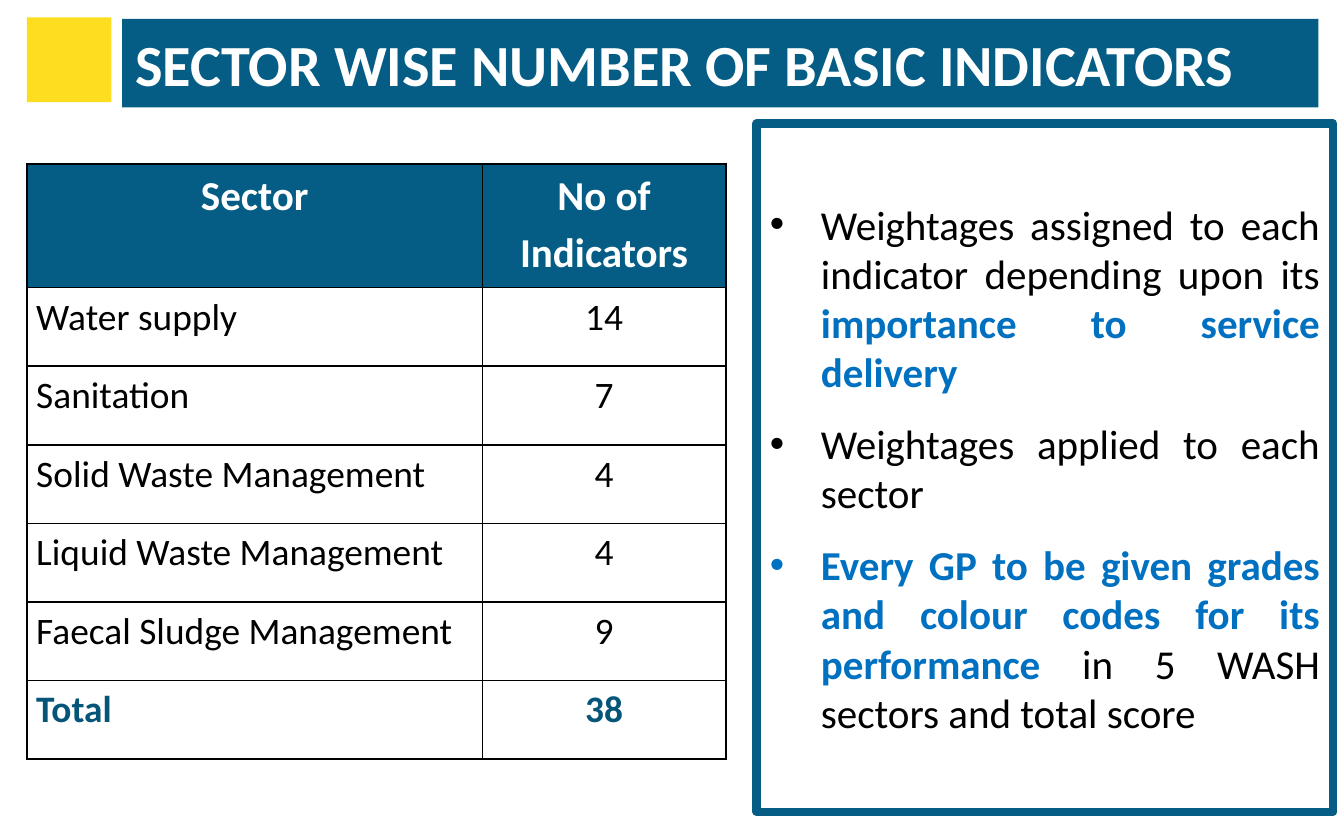
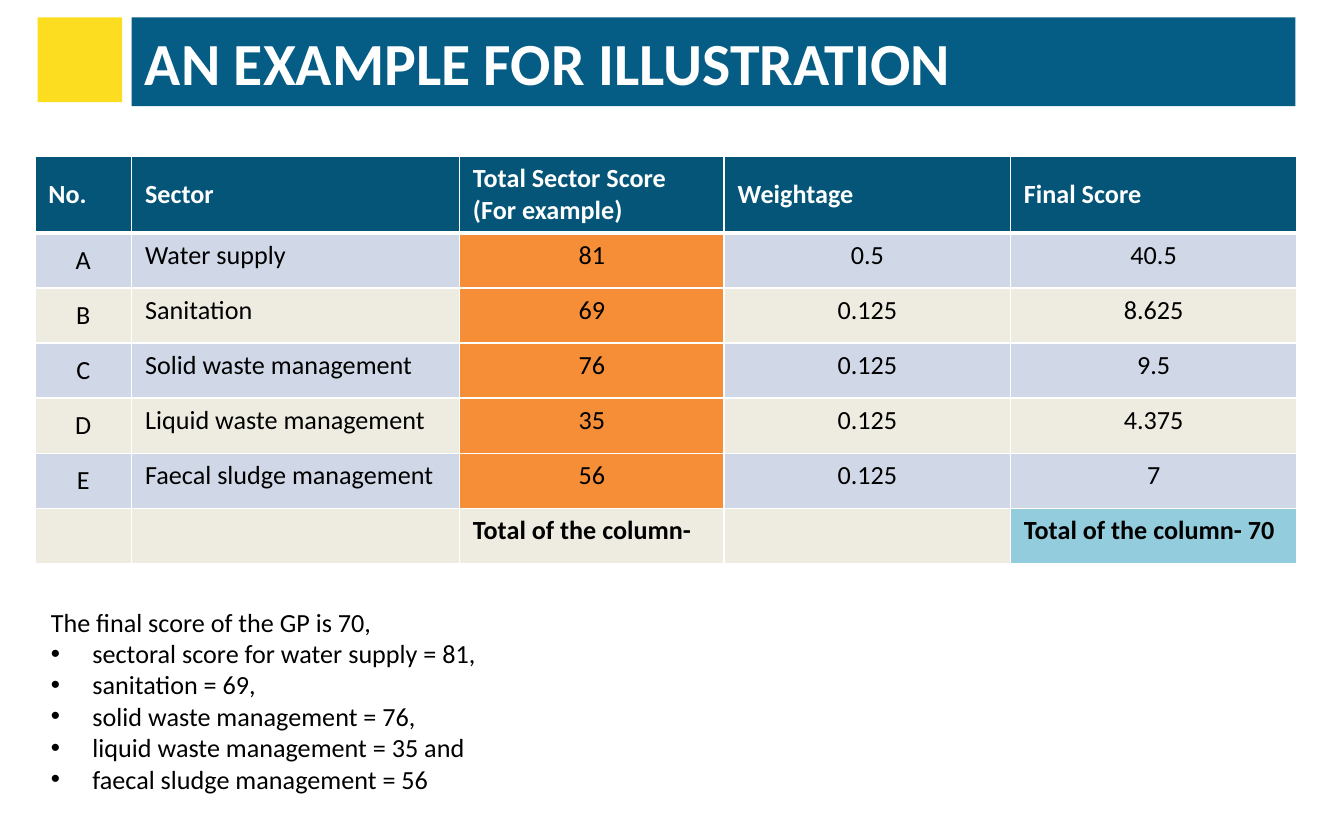
"""Build two slides on sector indicators and weighted scores."""
from dataclasses import dataclass, replace
from typing import Optional

from lxml import etree
from pptx import Presentation
from pptx.dml.color import RGBColor
from pptx.enum.shapes import MSO_SHAPE
from pptx.enum.text import MSO_ANCHOR, PP_ALIGN
from pptx.oxml.ns import qn
from pptx.util import Inches, Pt

RECTANGLE = MSO_SHAPE.RECTANGLE
TOP, MIDDLE = MSO_ANCHOR.TOP, MSO_ANCHOR.MIDDLE
LEFT, CENTER, JUSTIFY = PP_ALIGN.LEFT, PP_ALIGN.CENTER, PP_ALIGN.JUSTIFY

FONT = "Calibri"
WHITE, BLACK = "FFFFFF", "000000"
BAND_BLUE, DEEP_BLUE, ACCENT_BLUE = "055D85", "055579", "0070C0"
YELLOW, ORANGE, SKY = "FCDD20", "F68E38", "93CDDD"
STRIPES = ("D0D8E8", "EEECE1")


@dataclass(frozen=True)
class Area:
    """Position and size in inches."""
    left: float
    top: float
    width: float
    height: float


@dataclass(frozen=True)
class Span:
    """Text with one look."""
    text: str
    size: float
    color: str = BLACK
    bold: bool = False


@dataclass(frozen=True)
class Block:
    """Paragraph made of spans."""
    spans: tuple[Span, ...]
    align: PP_ALIGN = LEFT
    indent: float = 0
    space: float = 0
    line_spacing: Optional[float] = None


@dataclass(frozen=True)
class CellStyle:
    """Look of a table cell."""
    size: float
    fill: Optional[str] = None
    color: str = BLACK
    bold: bool = False
    align: PP_ALIGN = LEFT
    anchor: MSO_ANCHOR = TOP
    line_spacing: Optional[float] = None
    margins: tuple[float, float] = (0.1, 0.05)


@dataclass(frozen=True)
class Entry:
    """Text and style of a table cell."""
    text: str
    style: CellStyle


@dataclass(frozen=True)
class Header:
    """Title band and the square beside it."""
    title: str
    size: float
    band: Area
    square: Area


def rgb(color: str) -> RGBColor:
    """Turn a hex string into a colour."""
    return RGBColor.from_string(color)


def place(area: Area) -> tuple[int, int, int, int]:
    """Give an area as lengths."""
    return (Inches(area.left), Inches(area.top),
            Inches(area.width), Inches(area.height))


def add_bullet(para, indent: float) -> None:
    """Give a paragraph a hanging round bullet."""
    properties = para._p.get_or_add_pPr()
    properties.set("marL", str(Inches(indent)))
    properties.set("indent", str(-Inches(indent)))
    etree.SubElement(properties, qn("a:buFont")).set("typeface", "Arial")
    etree.SubElement(properties, qn("a:buChar")).set("char", "•")


def write(text_frame, blocks: list[Block]) -> None:
    """Fill a text frame with paragraphs."""
    text_frame.word_wrap = True
    for number, block in enumerate(blocks):
        para = text_frame.add_paragraph() if number else text_frame.paragraphs[0]
        para.alignment = block.align
        if block.line_spacing:
            para.line_spacing = block.line_spacing
        if block.space:
            para.space_before = para.space_after = Pt(block.space)
        if block.indent:
            add_bullet(para, block.indent)
        for span in block.spans:
            run = para.add_run()
            run.text = span.text
            run.font.name = FONT
            run.font.size = Pt(span.size)
            run.font.bold = span.bold
            run.font.color.rgb = rgb(span.color)


def add_box(page, area: Area, fill: str, line: Optional[str] = None,
            line_width: float = 0):
    """Add a flat rectangle."""
    box = page.shapes.add_shape(RECTANGLE, *place(area))
    box.shadow.inherit = False
    box.fill.solid()
    box.fill.fore_color.rgb = rgb(fill)
    if line:
        box.line.color.rgb = rgb(line)
        box.line.width = Pt(line_width)
    else:
        box.line.fill.background()
    box.text_frame.vertical_anchor = MIDDLE
    return box


def add_header(page, header: Header) -> None:
    """Add the title band and its square."""
    band = add_box(page, header.band, BAND_BLUE)
    write(band.text_frame, [Block((Span(header.title, header.size, WHITE, True),))])
    add_box(page, header.square, YELLOW)


def set_borders(cell, color: str, bottom: float) -> None:
    """Draw the four borders of a cell."""
    properties = cell._tc.get_or_add_tcPr()
    widths = {"lnL": 1, "lnR": 1, "lnT": 1, "lnB": bottom}
    for position, (side, width) in enumerate(widths.items()):
        line = etree.Element(qn(f"a:{side}"), w=str(Pt(width)))
        fill = etree.SubElement(line, qn("a:solidFill"))
        etree.SubElement(fill, qn("a:srgbClr")).set("val", color)
        properties.insert(position, line)


def fill_cell(cell, entry: Entry) -> None:
    """Write and style one cell."""
    style = entry.style
    side, edge = style.margins
    cell.margin_left = cell.margin_right = Inches(side)
    cell.margin_top = cell.margin_bottom = Inches(edge)
    cell.vertical_anchor = style.anchor
    if style.fill:
        cell.fill.solid()
        cell.fill.fore_color.rgb = rgb(style.fill)
    else:
        cell.fill.background()
    if entry.text:
        write(cell.text_frame, [
            Block((Span(line, style.size, style.color, style.bold),),
                  style.align, line_spacing=style.line_spacing)
            for line in entry.text.split("\n")])


def add_grid(page, area: Area, columns: list[float], heights: list[float],
             rows: list[list[Entry]], border: str, header_rule: float = 1) -> None:
    """Add a table with its own fills and borders."""
    table = page.shapes.add_table(len(rows), len(columns), *place(area)).table
    table.first_row = table.horz_banding = False
    for column, width in zip(table.columns, columns):
        column.width = Inches(width)
    for row, height in zip(table.rows, heights):
        row.height = Inches(height)
    for row_number, entries in enumerate(rows):
        bottom = 1 if row_number else header_rule
        for column_number, entry in enumerate(entries):
            cell = table.cell(row_number, column_number)
            fill_cell(cell, entry)
            set_borders(cell, border, bottom)


def build_indicators(page) -> None:
    """Build the slide with indicator counts."""
    counts = [("Water supply", 14), ("Sanitation", 7),
              ("Solid Waste Management", 4), ("Liquid Waste Management", 4),
              ("Faecal Sludge Management", 9)]
    body = CellStyle(20, align=JUSTIFY, line_spacing=1.15, margins=(0.07, 0))
    heading = replace(body, size=22, fill=BAND_BLUE, color=WHITE, bold=True,
                      align=CENTER)
    total = replace(body, color=DEEP_BLUE, bold=True)
    rows = [[Entry("Sector", heading), Entry("No of Indicators", heading)]]
    lines = [(name, count, body) for name, count in counts]
    lines.append(("Total", sum(count for _, count in counts), total))
    for name, count, style in lines:
        rows.append([Entry(name, style),
                     Entry(str(count), replace(style, align=CENTER))])
    add_grid(page, Area(0.2, 1.22, 5.2, 4.4), [3.39, 1.81],
             [0.92] + [0.585] * len(lines), rows, BLACK)

    size = 22
    points = [
        (Span("Weightages assigned to each indicator depending upon its ", size),
         Span("importance to service delivery", size, ACCENT_BLUE, True)),
        (Span("Weightages applied to each sector", size),),
        (Span("Every GP to be given grades and colour codes for its performance ",
              size, ACCENT_BLUE, True),
         Span("in 5 WASH sectors and total score", size)),
    ]
    panel = add_box(page, Area(5.63, 0.92, 4.29, 5.12), WHITE, BAND_BLUE, 4.5)
    write(panel.text_frame, [Block(spans, JUSTIFY, 0.38, 6) for spans in points])
    add_header(page, Header("SECTOR WISE NUMBER OF BASIC INDICATORS", 31.2,
                            Area(0.91, 0.14, 8.9, 0.66),
                            Area(0.2, 0.13, 0.63, 0.63)))


def build_example(page) -> None:
    """Build the slide with a worked score."""
    add_header(page, Header("AN EXAMPLE FOR ILLUSTRATION", 32,
                            Area(0.98, 0.13, 8.66, 0.66),
                            Area(0.28, 0.13, 0.63, 0.63)))
    size = 14
    scores = [("A", "Water supply", "81", "0.5", "40.5"),
              ("B", "Sanitation", "69", "0.125", "8.625"),
              ("C", "Solid waste management", "76", "0.125", "9.5"),
              ("D", "Liquid waste management", "35", "0.125", "4.375"),
              ("E", "Faecal sludge management", "56", "0.125", "7")]
    titles = ("No.", "Sector", "Total Sector Score\n(For example)",
              "Weightage", "Final Score")
    heading = CellStyle(size, DEEP_BLUE, WHITE, True, anchor=MIDDLE)
    rows = [[Entry(title, heading) for title in titles]]
    for number, (letter, sector, score, weight, final) in enumerate(scores):
        plain = CellStyle(size, STRIPES[number % 2])
        centred = replace(plain, align=CENTER)
        rows.append([Entry(letter, replace(centred, anchor=MIDDLE)),
                     Entry(sector, plain),
                     Entry(score, replace(centred, fill=ORANGE)),
                     Entry(weight, centred), Entry(final, centred)])
    total = CellStyle(size, STRIPES[len(scores) % 2], bold=True)
    rows.append([Entry("", total), Entry("", total),
                 Entry("Total of the column-", total), Entry("", total),
                 Entry("Total of the column- 70", replace(total, fill=SKY))])
    add_grid(page, Area(0.26, 1.16, 9.38, 3), [0.72, 2.44, 1.97, 2.13, 2.13],
             [0.41] * len(rows), rows, WHITE, 3)

    points = ["sectoral score for water supply = 81,", "sanitation = 69,",
              "solid waste management = 76,", "liquid waste management = 35 and",
              "faecal sludge management = 56"]
    summary = page.shapes.add_textbox(*place(Area(0.28, 4.46, 9.37, 1.51)))
    intro = Block((Span("The final score of the GP is 70,", size),), JUSTIFY)
    write(summary.text_frame, [intro] + [
        Block((Span(point, size),), JUSTIFY, 0.31) for point in points])


def main() -> None:
    """Build and save the deck."""
    deck = Presentation()
    deck.slide_width, deck.slide_height = Inches(10), Inches(6.25)
    blank = deck.slide_layouts[6]
    for build in (build_indicators, build_example):
        build(deck.slides.add_slide(blank))
    deck.save("out.pptx")


if __name__ == "__main__":
    main()
